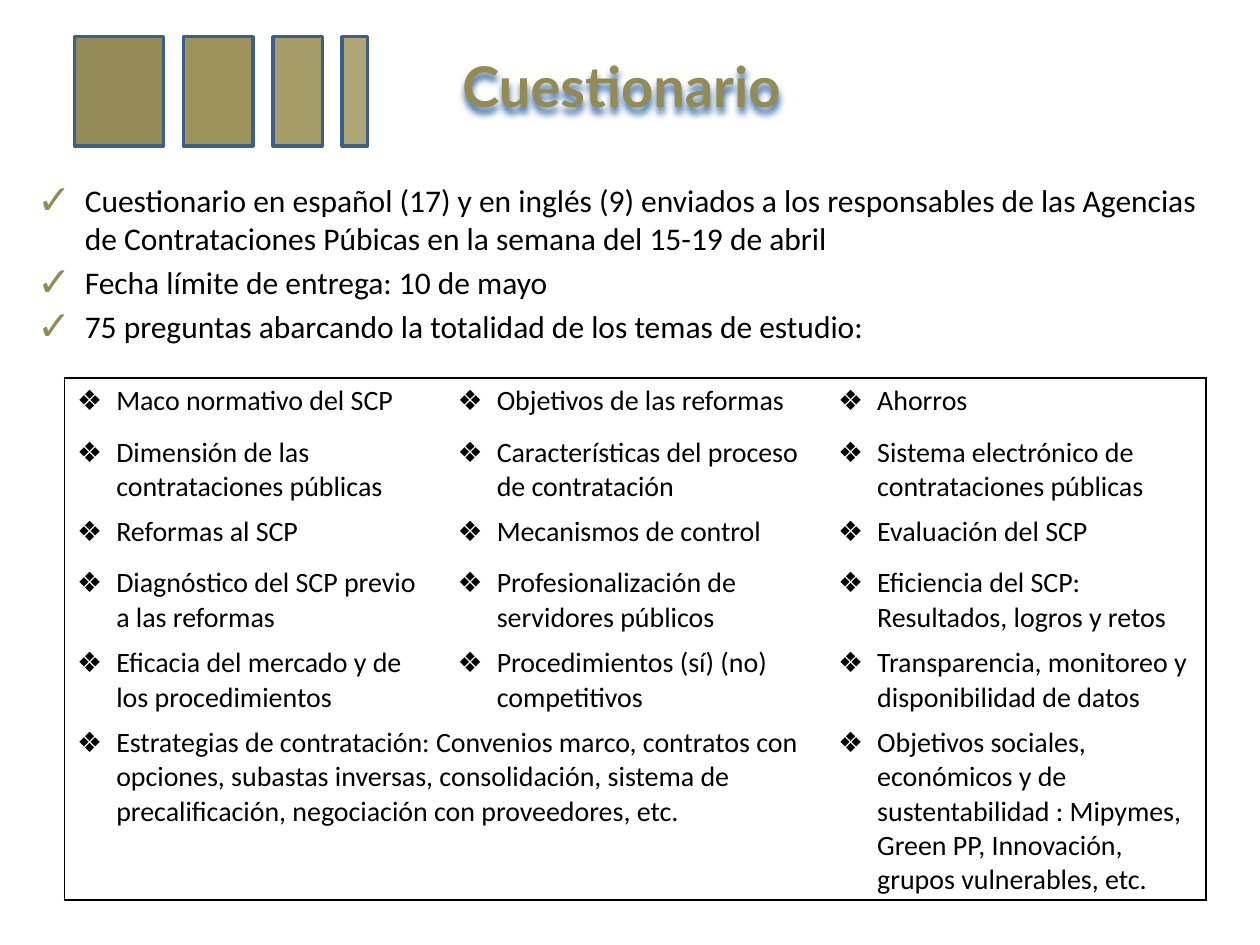
from lxml import etree
from pptx import Presentation
from pptx.dml.color import RGBColor
from pptx.enum.shapes import MSO_SHAPE
from pptx.enum.text import MSO_ANCHOR
from pptx.oxml.ns import qn
from pptx.util import Cm, Pt

RECTANGLE = MSO_SHAPE.RECTANGLE
MIDDLE = MSO_ANCHOR.MIDDLE
OLIVE, BLACK, OUTLINE, SHADOW = "948A54", "000000", "3A5F8C", "3A6EA5"

TITLE = "Cuestionario"
FACTS = [
    "Cuestionario en español (17) y en inglés (9) enviados a los responsables de las Agencias "
    "de Contrataciones Púbicas en la semana del 15-19 de abril",
    "Fecha límite de entrega: 10 de mayo",
    "75 preguntas abarcando la totalidad de los temas de estudio:",
]
# None continues the topic on its left
TOPICS = [
    ("Maco normativo del SCP", "Objetivos de las reformas", "Ahorros"),
    ("Dimensión de las contrataciones públicas",
     "Características del proceso de contratación",
     "Sistema electrónico de contrataciones públicas"),
    ("Reformas al SCP", "Mecanismos de control", "Evaluación del SCP"),
    ("Diagnóstico del SCP previo a las reformas",
     "Profesionalización de servidores públicos",
     "Eficiencia del SCP: Resultados, logros y retos"),
    ("Eficacia del mercado y de los procedimientos",
     "Procedimientos (sí) (no) competitivos",
     "Transparencia, monitoreo y disponibilidad de datos"),
    ("Estrategias de contratación: Convenios marco, contratos con opciones, subastas inversas, "
     "consolidación, sistema de precalificación, negociación con proveedores, etc.",
     None,
     "Objetivos sociales, económicos y de sustentabilidad : Mipymes, Green PP, Innovación, "
     "grupos vulnerables, etc."),
]
BARS = [(1.8, OLIVE), (1.4, "9D9259"), (1.0, "A79C65"), (0.51, "B0A674")]  # width in cm, fill
BAR_LEFT, BAR_TOP, BAR_HEIGHT, BAR_GAP = 1.5, 0.74, 2.2, 0.4
COLUMN_WIDTH, ROW_HEIGHT = 7.67, 1.03


def rgb(value):
    return RGBColor.from_string(value)


def add_run(paragraph, text, size, font, color, bold=False):
    run = paragraph.add_run()
    run.text = text
    run.font.size, run.font.name, run.font.bold = Pt(size), font, bold
    run.font.color.rgb = rgb(color)


def add_bullet(paragraph, mark, indent, color=None, percent=100):
    props = paragraph._p.get_or_add_pPr()
    props.set("marL", str(Cm(indent)))
    props.set("indent", str(-Cm(indent)))
    if color:
        holder = etree.SubElement(props, qn("a:buClr"))
        etree.SubElement(holder, qn("a:srgbClr"), val=color)
    etree.SubElement(props, qn("a:buSzPct"), val=str(percent * 1000))
    etree.SubElement(props, qn("a:buFont"), typeface="Calibri")
    etree.SubElement(props, qn("a:buChar"), char=mark)


def add_text_frame(slide, left, top, width, height):
    box = slide.shapes.add_textbox(Cm(left), Cm(top), Cm(width), Cm(height))
    box.text_frame.word_wrap = True
    return box


def set_borders(cell, sides):
    """Draw a black line on the named sides (L, R, T, B) and none on the others."""
    props = cell._tc.get_or_add_tcPr()
    for side in "LRTB":
        line = etree.SubElement(props, qn(f"a:ln{side}"), w=str(Pt(1)))
        if side in sides:
            fill = etree.SubElement(line, qn("a:solidFill"))
            etree.SubElement(fill, qn("a:srgbClr"), val=BLACK)
        else:
            etree.SubElement(line, qn("a:noFill"))


def add_title(slide):
    box = add_text_frame(slide, 9.07, 0.13, 16.43, 3.18)
    box.text_frame.vertical_anchor = MIDDLE
    add_run(box.text_frame.paragraphs[0], TITLE, 32, "Lato", OLIVE, bold=True)
    effects = etree.SubElement(box._element.spPr, qn("a:effectLst"))
    shadow = etree.SubElement(effects, qn("a:outerShdw"), blurRad=str(Pt(4)),
                              dist=str(Pt(3)), dir="5400000", rotWithShape="0")
    etree.SubElement(shadow, qn("a:srgbClr"), val=SHADOW)


def add_bars(slide):
    left = BAR_LEFT
    for width, color in BARS:
        bar = slide.shapes.add_shape(RECTANGLE, Cm(left), Cm(BAR_TOP), Cm(width), Cm(BAR_HEIGHT))
        bar.shadow.inherit = False
        bar.fill.solid()
        bar.fill.fore_color.rgb = rgb(color)
        bar.line.color.rgb = rgb(OUTLINE)
        bar.line.width = Pt(2)
        left += width + BAR_GAP


def add_facts(slide):
    frame = add_text_frame(slide, 0.5, 3.53, 24, 4).text_frame
    for index, fact in enumerate(FACTS):
        paragraph = frame.add_paragraph() if index else frame.paragraphs[0]
        paragraph.space_before = Pt(3.6)
        add_bullet(paragraph, "✓", 0.96, OLIVE, 130)
        add_run(paragraph, fact, 18, "Calibri", BLACK)


def add_topics(slide):
    rows, columns = len(TOPICS), len(TOPICS[0])
    table = slide.shapes.add_table(rows, columns, Cm(1.3), Cm(7.62), Cm(columns * COLUMN_WIDTH),
                                   Cm(rows * ROW_HEIGHT)).table
    table.first_row = table.horz_banding = False
    for column in table.columns:
        column.width = Cm(COLUMN_WIDTH)
    for r, topics in enumerate(TOPICS):
        table.rows[r].height = Cm(ROW_HEIGHT)
        for c, topic in enumerate(topics):
            cell = table.cell(r, c)
            edges = {"L": c == 0, "R": c == columns - 1, "T": r == 0, "B": r == rows - 1}
            set_borders(cell, [side for side, outer in edges.items() if outer])
            cell.fill.background()
            if topic is None:
                table.cell(r, c - 1).merge(cell)
                continue
            paragraph = cell.text_frame.paragraphs[0]
            add_bullet(paragraph, "❖", 0.79)
            add_run(paragraph, topic, 16, "Calibri", BLACK)


def main():
    deck = Presentation()
    deck.slide_width, deck.slide_height = Cm(25.4), Cm(19.05)
    slide = deck.slides.add_slide(deck.slide_layouts[6])
    add_facts(slide)
    add_title(slide)
    add_bars(slide)
    add_topics(slide)
    deck.save("out.pptx")


if __name__ == "__main__":
    main()
